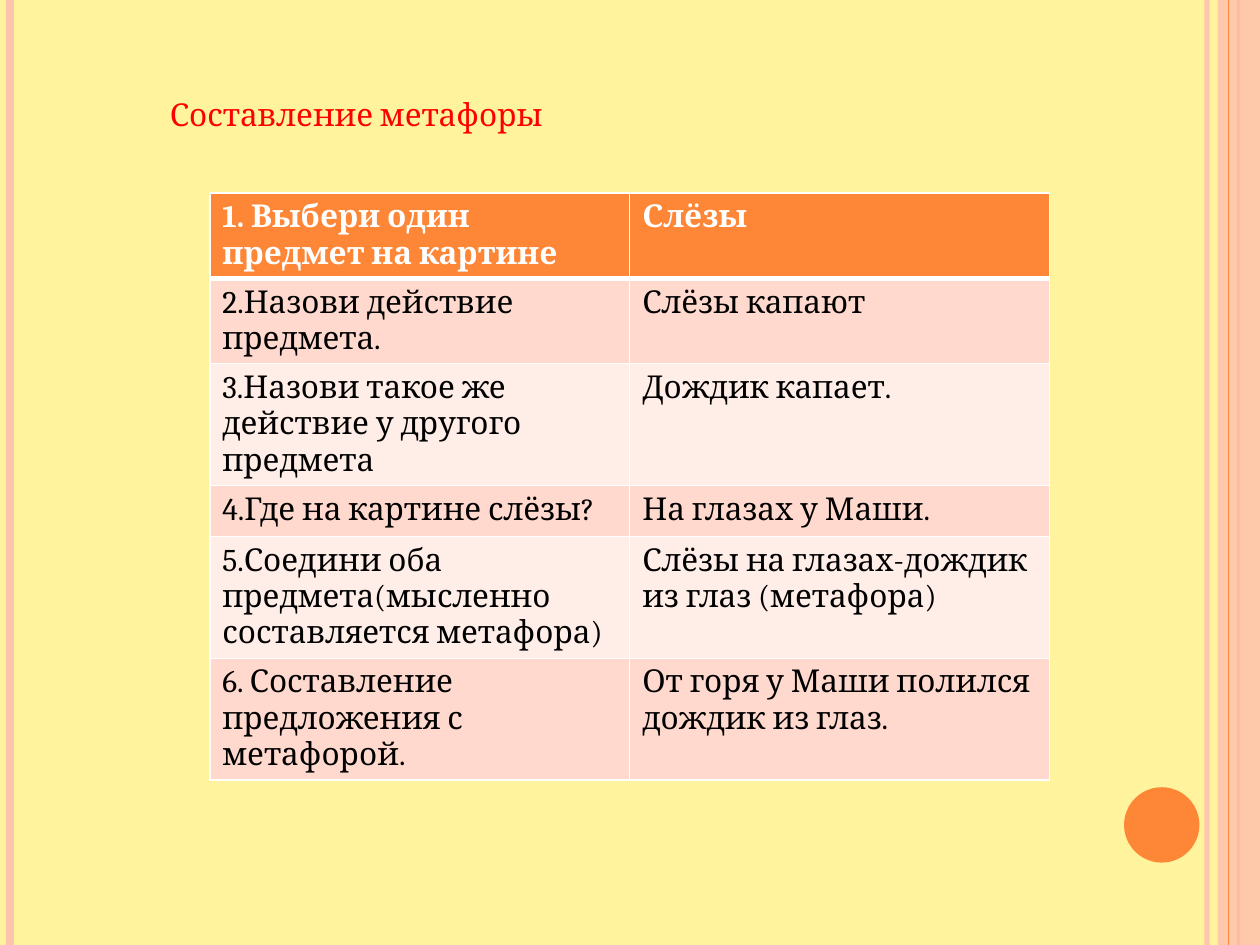
import pptx
import pptx.util
import pptx.dml.color
import pptx.enum.shapes
import pptx.enum.text
import pptx.oxml.ns
from lxml import etree

Cm = pptx.util.Cm
Pt = pptx.util.Pt
RGBColor = pptx.dml.color.RGBColor
qn = pptx.oxml.ns.qn
MSO_SHAPE = pptx.enum.shapes.MSO_SHAPE

YELLOW = RGBColor(0xFF, 0xF3, 0x9D)
ORANGE = RGBColor(0xFE, 0x86, 0x37)
PEACH = RGBColor(0xFE, 0xC3, 0xAE)
BAND_DARK = RGBColor(0xFF, 0xD9, 0xCE)
BAND_LIGHT = RGBColor(0xFF, 0xED, 0xE8)
RED = RGBColor(0xFF, 0x00, 0x00)
WHITE = RGBColor(0xFF, 0xFF, 0xFF)
BLACK = RGBColor(0x00, 0x00, 0x00)

FONT = "Cambria"
WIDTH, HEIGHT = 25.4, 19.05

ROWS = [
    ("1. Выбери один предмет на картине", "Слёзы"),
    ("2.Назови действие предмета.", "Слёзы капают"),
    ("3.Назови такое же действие у другого предмета", "Дождик капает."),
    ("4.Где на картине слёзы?", "На глазах у Маши."),
    ("5.Соедини оба предмета(мысленно составляется метафора)",
     "Слёзы на глазах-дождик из глаз (метафора)"),
    ("6. Составление предложения с метафорой.",
     "От горя у Маши полился дождик из глаз."),
]


def set_alpha(parent, percent):
    """Make the solid colour found under parent partly transparent."""
    clr = parent.find(".//" + qn("a:srgbClr"))
    etree.SubElement(clr, qn("a:alpha"), val=str(percent * 1000))


def add_text(p, text, color, bold=False):
    r = p.add_run()
    r.text = text
    r.font.name = FONT
    r.font.size = Pt(18)
    r.font.bold = bold
    r.font.color.rgb = color


def add_stripe(s, x, top, height, color, weight, alpha=100):
    """Draw a vertical line."""
    line = s.shapes.add_connector(pptx.enum.shapes.MSO_CONNECTOR.STRAIGHT,
                                  Cm(x), Cm(top), Cm(x), Cm(top + height))
    line.line.color.rgb = color
    line.line.width = Pt(weight)
    if alpha < 100:
        set_alpha(line.line._ln, alpha)
    etree.SubElement(line._element.spPr, qn("a:effectLst"))


def add_plain_shape(s, kind, left, top, width, height, color):
    sp = s.shapes.add_shape(kind, Cm(left), Cm(top), Cm(width), Cm(height))
    sp.shadow.inherit = False
    sp.fill.solid()
    sp.fill.fore_color.rgb = color
    sp.line.fill.background()
    return sp


def add_decoration(s, left, top, width, height):
    """Draw the edge stripes and the disc inside the given box."""
    right = left + width
    add_stripe(s, right - 1.07, top, height, PEACH, 3, 93)
    add_stripe(s, left + 0.2, top, height, PEACH, 4.5)
    add_stripe(s, right - 0.43, top, height, ORANGE, 1.5)
    band = add_plain_shape(s, MSO_SHAPE.RECTANGLE, right - 0.85, top,
                           0.85, height, PEACH)
    set_alpha(band._element.spPr, 87)
    add_stripe(s, right - 0.64, top, height, ORANGE, 0.75)
    add_plain_shape(s, MSO_SHAPE.OVAL, right - 2.74, top + height - 3.18,
                    1.52, 1.52, ORANGE)


def add_title(s, left, top, width, height):
    sp = s.shapes.title
    sp.left, sp.top, sp.width, sp.height = map(Cm, (left, top, width, height))
    tf = sp.text_frame
    tf.word_wrap = True
    tf.auto_size = pptx.enum.text.MSO_AUTO_SIZE.NONE
    tf.vertical_anchor = pptx.enum.text.MSO_ANCHOR.TOP
    p = tf.paragraphs[0]
    p.alignment = pptx.enum.text.PP_ALIGN.LEFT
    add_text(p, "Составление метафоры", RED)


def set_borders(cell, **weights):
    """Give the cell white borders, one per side name (L, R, T, B)."""
    tc_pr = cell._tc.get_or_add_tcPr()
    for side, weight in weights.items():
        ln = etree.SubElement(tc_pr, qn("a:ln" + side), w=str(Pt(weight)))
        fill = etree.SubElement(ln, qn("a:solidFill"))
        etree.SubElement(fill, qn("a:srgbClr"), val=str(WHITE))


def add_metaphor_table(s, left, top, width, row_height):
    table = s.shapes.add_table(len(ROWS), 2, Cm(left), Cm(top), Cm(width),
                               Cm(row_height * len(ROWS))).table
    for i, texts in enumerate(ROWS):
        header = i == 0
        band = ORANGE if header else BAND_DARK if i % 2 else BAND_LIGHT
        for j, text in enumerate(texts):
            cell = table.cell(i, j)
            set_borders(cell, L=1, R=1, T=3 if i == 1 else 1,
                        B=3 if header else 1)
            cell.fill.solid()
            cell.fill.fore_color.rgb = band
            add_text(cell.text_frame.paragraphs[0], text,
                     WHITE if header else BLACK, header)


def main():
    prs = pptx.Presentation()
    prs.slide_width, prs.slide_height = Cm(WIDTH), Cm(HEIGHT)
    s = prs.slides.add_slide(prs.slide_layouts.get_by_name("Title Only"))
    s.background.fill.solid()
    s.background.fill.fore_color.rgb = YELLOW
    add_decoration(s, 0, 0, WIDTH, HEIGHT)
    add_title(s, 3.17, 1.78, 13.49, 1.03)
    add_metaphor_table(s, 4.23, 3.89, 16.93, 1.03)
    prs.save("out.pptx")


if __name__ == "__main__":
    main()
